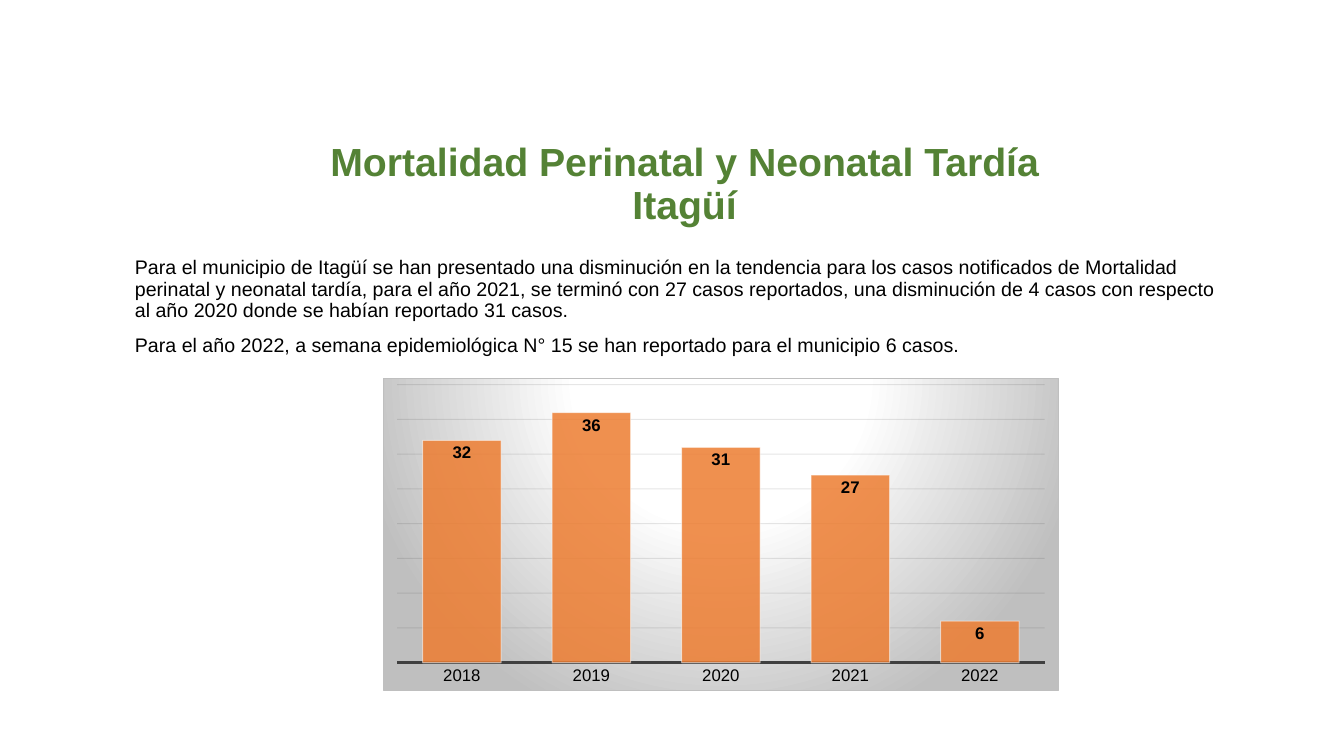
import pptx
import pptx.util
import pptx.oxml
import pptx.chart.data
import pptx.dml.color
import pptx.enum.chart
import pptx.enum.text
from lxml import etree

# Content
TITLE = "Mortalidad Perinatal y Neonatal Tardía\vItagüí"
BODY = [
    "Para el municipio de Itagüí se han presentado una disminución en la tendencia para los casos "
    "notificados de Mortalidad perinatal y neonatal tardía, para el año 2021, se terminó con 27 casos "
    "reportados, una disminución de 4 casos con respecto al año 2020 donde se habían reportado 31 casos.",
    "Para el año 2022, a semana epidemiológica N° 15 se han reportado para el municipio 6 casos.",
]
CASES = {"2018": 32, "2019": 36, "2020": 31, "2021": 27, "2022": 6}

# Style
COLORS = {"title": "548235", "text": "000000", "bar": "ED7D31", "edge": "FFFFFF",
          "axis": "404040", "grid": "0D0D0D", "border": "BFBFBF"}
FONT = "Arial"
W, H = 13.33, 7.5
# Left, top, width, height as shares of the slide
TITLE_BOX = (0.1163, 0.1747, 0.7862, 0.1333)
BODY_BOX = (0.093, 0.3347, 0.832, 0.6)
CHART_BOX = (0.2851, 0.5, 0.5026, 0.4147)
PLOT_BOX = {"x": 0.02, "y": 0.02, "w": 0.96, "h": 0.89}
NS = 'xmlns:c="{}" xmlns:a="{}"'.format(
    "http://schemas.openxmlformats.org/drawingml/2006/chart",
    "http://schemas.openxmlformats.org/drawingml/2006/main")


def place(box):
    return [pptx.util.Inches(share * side) for share, side in zip(box, (W, H, W, H))]


def rgb(name):
    return pptx.dml.color.RGBColor.from_string(COLORS[name])


def style(font, size, color="text", bold=False):
    font.name, font.size, font.bold = FONT, pptx.util.Pt(size), bold
    font.color.rgb = rgb(color)


def set_line(line, color, width):
    line.color.rgb = rgb(color)
    line.width = pptx.util.Pt(width)


def set_alpha(element, *percents):
    for clr, percent in zip(element.xpath("c:spPr//a:srgbClr"), percents):
        etree.SubElement(clr, pptx.oxml.ns.qn("a:alpha")).set("val", str(percent * 1000))


prs = pptx.Presentation()
prs.slide_width, prs.slide_height = pptx.util.Inches(W), pptx.util.Inches(H)
s = prs.slides.add_slide(prs.slide_layouts[5])

# Title
title = s.shapes.title
title.left, title.top, title.width, title.height = place(TITLE_BOX)
tf = title.text_frame
tf.text = TITLE
tf.auto_size = pptx.enum.text.MSO_AUTO_SIZE.NONE
tf.vertical_anchor = pptx.enum.text.MSO_ANCHOR.BOTTOM
p = tf.paragraphs[0]
p.alignment = pptx.enum.text.PP_ALIGN.CENTER
p.line_spacing = 0.9
for r in p.runs:
    style(r.font, 28, "title", True)

# Body text
tf = s.shapes.add_textbox(*place(BODY_BOX)).text_frame
tf.word_wrap = True
tf.text = "\n".join(BODY)
for i, p in enumerate(tf.paragraphs):
    p.line_spacing = 0.9
    p.space_before = pptx.util.Pt(10 if i else 0)
    style(p.runs[0].font, 14)

# Column chart
data = pptx.chart.data.CategoryChartData()
data.categories = list(CASES)
data.add_series("Series 1", list(CASES.values()))
chart = s.shapes.add_chart(pptx.enum.chart.XL_CHART_TYPE.COLUMN_CLUSTERED,
                           *place(CHART_BOX), data).chart
chart.has_legend = chart.has_title = False
style(chart.font, 12)

plot = chart.plots[0]
plot.gap_width = 65
plot.vary_by_categories = False
ser = plot.series[0]
ser.format.fill.solid()
ser.format.fill.fore_color.rgb = rgb("bar")
set_line(ser.format.line, "edge", 0.75)
set_alpha(ser._element, 85, 50)
labels = ser.data_labels
labels.show_value = True
labels.position = pptx.enum.chart.XL_LABEL_POSITION.INSIDE_END
style(labels.font, 12, bold=True)

# Axes
years, counts = chart.category_axis, chart.value_axis
years.major_tick_mark = pptx.enum.chart.XL_TICK_MARK.NONE
style(years.tick_labels.font, 12)
set_line(years.format.line, "axis", 2.25)
counts.minimum_scale, counts.maximum_scale, counts.major_unit = 0, 40, 5
counts.has_major_gridlines = True
set_line(counts.major_gridlines.format.line, "grid", 0.75)
set_alpha(counts._element.xpath("c:majorGridlines")[0], 10)
counts.visible = False

# Plot area position
area = chart._chartSpace.xpath("c:chart/c:plotArea")[0]
for old in area.xpath("c:layout"):
    area.remove(old)
modes = "".join(f'<c:{k}Mode val="edge"/>' for k in "xy")
sizes = "".join(f'<c:{k} val="{v}"/>' for k, v in PLOT_BOX.items())
area.insert(0, pptx.oxml.parse_xml(
    f'<c:layout {NS}><c:manualLayout><c:layoutTarget val="inner"/>{modes}{sizes}'
    '</c:manualLayout></c:layout>'))

# Chart background: radial gradient and thin border
stops = "".join(f'<a:gs pos="{pos * 1000}"><a:srgbClr val="{COLORS[name]}"/></a:gs>'
                for pos, name in ((0, "edge"), (39, "edge"), (100, "border")))
chart._chartSpace.xpath("c:txPr")[0].addprevious(pptx.oxml.parse_xml(
    f'<c:spPr {NS}><a:gradFill><a:gsLst>{stops}</a:gsLst><a:path path="circle">'
    '<a:fillToRect l="50000" t="-80000" r="50000" b="180000"/></a:path></a:gradFill>'
    f'<a:ln w="{pptx.util.Pt(0.75)}"><a:solidFill><a:srgbClr val="{COLORS["border"]}"/>'
    '</a:solidFill></a:ln></c:spPr>'))

prs.save("out.pptx")
